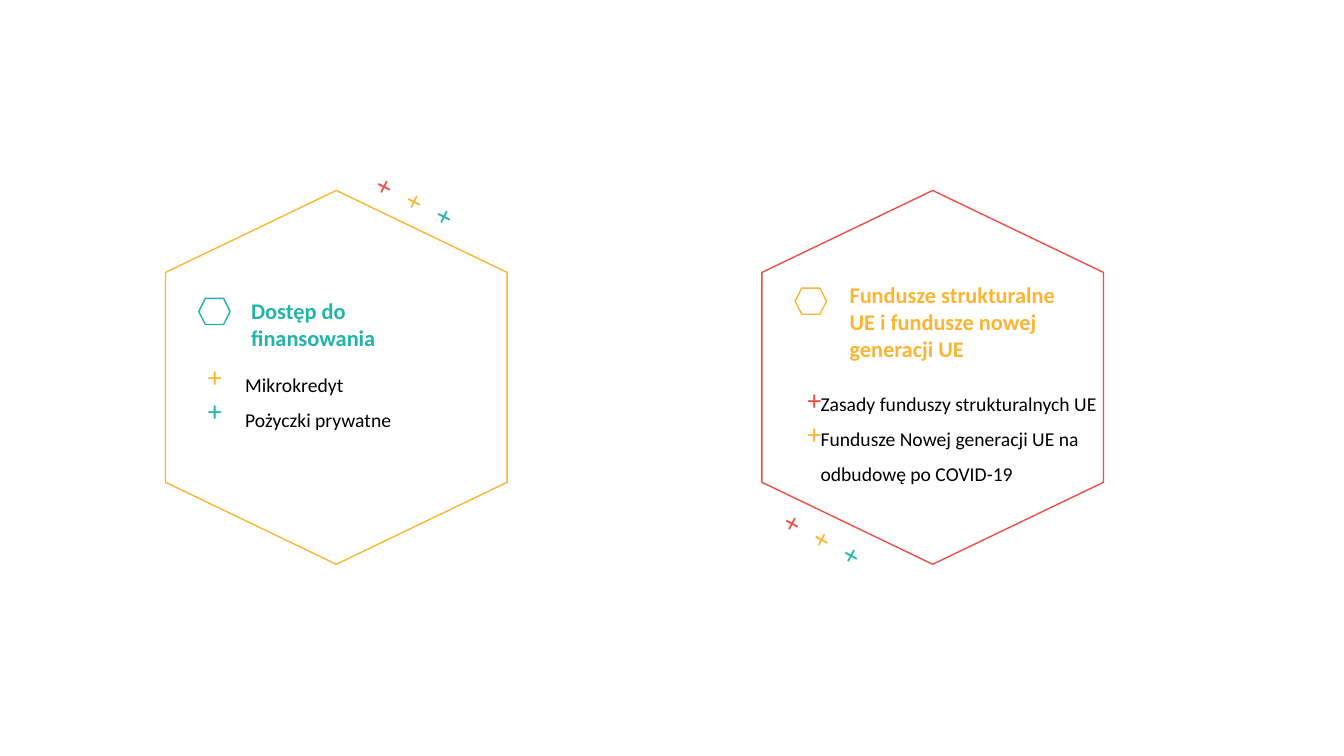
from pptx import Presentation
from pptx.dml.color import RGBColor
from pptx.enum.shapes import MSO_SHAPE
from pptx.enum.text import MSO_ANCHOR, MSO_AUTO_SIZE, PP_ALIGN
from pptx.util import Cm, Pt

COLORS = {"red": "EA4E46", "yellow": "FAB632", "teal": "21B4A9", "black": "000000"}
FONT = "Calibri"
PANEL_SIZE = (8.61, 9.42)

# Part boxes are left, top, width, height in centimetres from the panel corner
PANELS = [
    {
        "corner": (4.17, 4.8),
        "outline": "yellow",
        "accent": "teal",
        "heading": "Dostęp do finansowania",
        "heading_box": (2.03, 2.57, 5.87, 1.63),
        "icon_box": (0.84, 2.72, 0.79, 0.66),
        "items": ["Mikrokredyt", "Pożyczki prywatne"],
        "items_box": (1.88, 4.19, 6.4, 1.96),
        "markers": ["yellow", "teal"],
        "markers_box": (0.94, 4.14, 0.51, 1.8),
        "edge_box": (5.77, -1.19, 0.84, 2.64),
        "edge_angle": 296.6,
    },
    {
        "corner": (19.2, 4.8),
        "outline": "red",
        "accent": "yellow",
        "heading": "Fundusze strukturalne UE i fundusze nowej generacji UE",
        "heading_box": (2.08, 2.16, 6.1, 2.31),
        "icon_box": (0.84, 2.46, 0.79, 0.66),
        "items": [
            "Zasady funduszy strukturalnych UE",
            "Fundusze Nowej generacji UE na odbudowę po COVID-19",
        ],
        "items_box": (1.35, 4.65, 7.26, 2.84),
        "markers": ["red", "yellow"],
        "markers_box": (1.02, 4.72, 0.51, 1.8),
        "edge_box": (1.02, 7.32, 0.84, 2.64),
        "edge_angle": 298.4,
    },
]


def color(name):
    return RGBColor.from_string(COLORS[name])


def place(corner, box):
    left, top, width, height = box
    return Cm(corner[0] + left), Cm(corner[1] + top), Cm(width), Cm(height)


def add_hexagon(slide, bounds, line_color, adjustment):
    hexagon = slide.shapes.add_shape(MSO_SHAPE.HEXAGON, *bounds)
    hexagon.shadow.inherit = False
    hexagon.adjustments[0] = adjustment
    hexagon.fill.background()
    hexagon.line.color.rgb = color(line_color)
    hexagon.line.width = Pt(1)
    return hexagon


def add_text(slide, bounds, paragraphs, size, bold=False, spacing=None):
    """Each paragraph is a list of (text, color name) spans."""
    box = slide.shapes.add_textbox(*bounds)
    frame = box.text_frame
    frame.word_wrap = True
    frame.auto_size = MSO_AUTO_SIZE.SHAPE_TO_FIT_TEXT
    frame.vertical_anchor = MSO_ANCHOR.TOP
    frame.margin_left = frame.margin_right = Cm(0.13)
    frame.margin_top = frame.margin_bottom = Cm(0.13)
    for index, spans in enumerate(paragraphs):
        para = frame.add_paragraph() if index else frame.paragraphs[0]
        para.alignment = PP_ALIGN.LEFT
        if spacing:
            para.line_spacing = spacing
        for text, color_name in spans:
            span = para.add_run()
            span.text = text
            span.font.name = FONT
            span.font.size = Pt(size)
            span.font.bold = bold
            span.font.color.rgb = color(color_name)
    return box


def add_pluses(slide, bounds, color_names):
    # The narrow box wraps after every plus, which stacks them
    return add_text(slide, bounds, [[("+", name) for name in color_names]], 20)


def add_panel(slide, panel):
    corner = panel["corner"]
    width, height = PANEL_SIZE

    # Text
    items = [[(item, "black")] for item in panel["items"]]
    add_text(slide, place(corner, panel["items_box"]), items, 14, spacing=Pt(25))
    heading = [[(panel["heading"], panel["accent"])]]
    add_text(slide, place(corner, panel["heading_box"]), heading, 16, bold=True)

    # Small icon and large outline, the latter turned to stand on its point
    add_hexagon(slide, place(corner, panel["icon_box"]), panel["accent"], 0.25)
    turned_box = ((width - height) / 2, (height - width) / 2, height, width)
    outline = add_hexagon(slide, place(corner, turned_box), panel["outline"], 0.24)
    outline.rotation = 90

    # Plus signs beside the items and along the slanted edge
    add_pluses(slide, place(corner, panel["markers_box"]), panel["markers"])
    edge = add_pluses(slide, place(corner, panel["edge_box"]), ["red", "yellow", "teal"])
    edge.rotation = panel["edge_angle"]


def main():
    deck = Presentation()
    deck.slide_width, deck.slide_height = Cm(33.87), Cm(19.05)
    page = deck.slides.add_slide(deck.slide_layouts[6])
    for panel in PANELS:
        add_panel(page, panel)
    deck.save("out.pptx")


if __name__ == "__main__":
    main()
